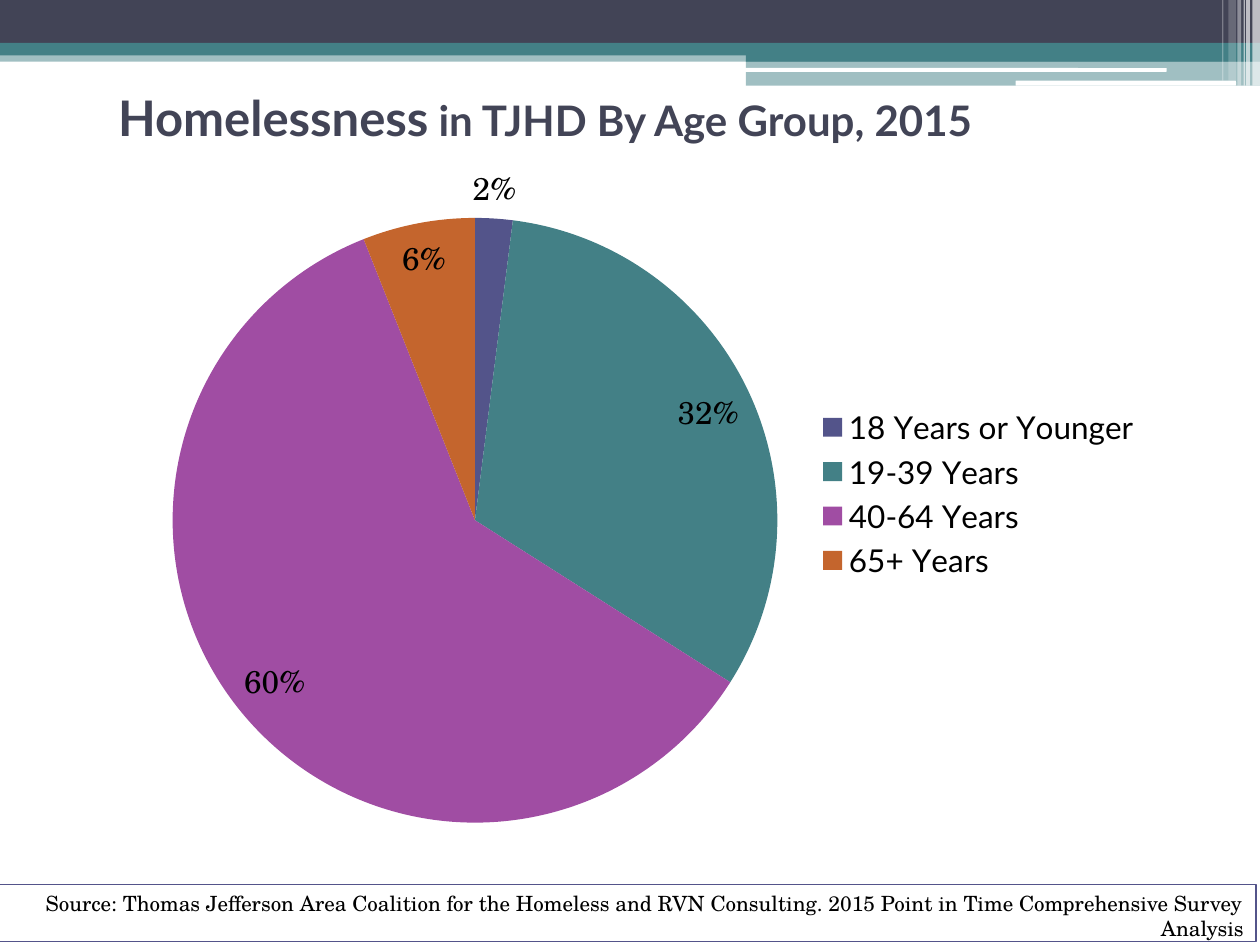
from dataclasses import dataclass

from lxml import etree
from pptx import Presentation
from pptx import util as u
from pptx.chart.data import CategoryChartData
from pptx.dml.color import RGBColor
from pptx.enum import chart as ch, shapes, text
from pptx.oxml.ns import qn


@dataclass(frozen=True)
class Theme:
    dark: str = "424456"
    teal: str = "438086"
    white: str = "FFFFFF"
    black: str = "000000"
    outline: str = "53548A"
    slices: tuple[str, ...] = ("53548A", "438086", "A04DA3", "C4652D")
    sans: str = "Lato"
    serif: str = "TeX Gyre Schola"
    title: int = 28
    subtitle: int = 24
    chart: int = 18
    source: int = 12


@dataclass(frozen=True)
class Bar:
    left: float
    top: float
    width: float
    height: float
    color: str
    opacity: int = 100
    rounded: bool = False


THEME = Theme()

# Header bands, then white rules, then white vertical stripes
BARS = [
    Bar(0, 0.4, 10, 0.09, THEME.teal, 50),
    Bar(0, 0, 10, 0.34, THEME.dark),
    Bar(0, 0.34, 10, 0.1, THEME.teal),
    Bar(5.92, 0.39, 4.08, 0.1, THEME.teal),
    Bar(5.92, 0.48, 4.08, 0.2, THEME.teal, 50),
    Bar(5.91, 0.54, 3.35, 0.03, THEME.white, rounded=True),
    Bar(8.06, 0.64, 1.75, 0.04, THEME.white, rounded=True),
    Bar(9.94, 0, 0.06, 0.68, THEME.white, 65),
    Bar(9.89, 0, 0.03, 0.68, THEME.white, 65),
    Bar(9.87, 0, 0.01, 0.68, THEME.white, 60),
    Bar(9.82, 0, 0.03, 0.68, THEME.white, 40),
    Bar(9.75, 0, 0.06, 0.64, THEME.white, 20),
    Bar(9.7, 0, 0.01, 0.64, THEME.white, 30),
]

AGE_GROUPS = {
    "18 Years or Younger": 2,
    "19-39 Years": 32,
    "40-64 Years": 60,
    "65+ Years": 6,
}
CHART_WIDTH, CHART_HEIGHT = 8.08, 5.5
PIE_LEFT, PIE_TOP, PIE_SIZE = 0.29, 0.56, 4.8  # inches within the chart


def style_font(font, name: str, size: int, color: str, bold: bool = False) -> None:
    font.name = name
    font.size = u.Pt(size)
    font.bold = bold
    font.color.rgb = RGBColor.from_string(color)


def add_bar(s, bar: Bar):
    kind = shapes.MSO_SHAPE.ROUNDED_RECTANGLE if bar.rounded else shapes.MSO_SHAPE.RECTANGLE
    sp = s.shapes.add_shape(kind, u.Inches(bar.left), u.Inches(bar.top),
                            u.Inches(bar.width), u.Inches(bar.height))
    sp.shadow.inherit = False
    sp.fill.solid()
    sp.fill.fore_color.rgb = RGBColor.from_string(bar.color)
    sp.line.fill.background()
    if bar.opacity < 100:
        color = sp.fill._xPr.find(".//" + qn("a:srgbClr"))
        etree.SubElement(color, qn("a:alpha"), val=str(bar.opacity * 1000))
    return sp


def add_title(s) -> None:
    sp = s.shapes.add_textbox(u.Inches(0.84), u.Inches(0.59), u.Inches(8.33), u.Inches(0.67))
    tf = sp.text_frame
    tf.word_wrap = True
    tf.vertical_anchor = text.MSO_ANCHOR.MIDDLE
    p = tf.paragraphs[0]
    for words, size in (("Homelessness", THEME.title),
                        (" in TJHD By Age Group, 2015", THEME.subtitle)):
        r = p.add_run()
        r.text = words
        style_font(r.font, THEME.sans, size, THEME.dark, bold=True)


def add_source(s) -> None:
    sp = add_bar(s, Bar(-0.03, 7.02, 10, 0.45, THEME.white))
    sp.line.color.rgb = RGBColor.from_string(THEME.outline)
    sp.line.width = u.Pt(0.75)
    tf = sp.text_frame
    tf.word_wrap = True
    tf.vertical_anchor = text.MSO_ANCHOR.TOP
    tf.text = ("Source: Thomas Jefferson Area Coalition for the Homeless and RVN Consulting. "
               "2015 Point in Time Comprehensive Survey Analysis")
    p = tf.paragraphs[0]
    p.alignment = text.PP_ALIGN.RIGHT
    style_font(p.runs[0].font, THEME.serif, THEME.source, THEME.black)


def place_pie(chart) -> None:
    """Fix the inner plot area, in fractions of the chart."""
    area = chart._chartSpace.find(".//" + qn("c:plotArea"))
    for old in area.findall(qn("c:layout")):
        area.remove(old)
    layout = etree.Element(qn("c:layout"))
    area.insert(0, layout)
    manual = etree.SubElement(layout, qn("c:manualLayout"))
    settings = {"layoutTarget": "inner", "xMode": "edge", "yMode": "edge",
                "x": PIE_LEFT / CHART_WIDTH, "y": PIE_TOP / CHART_HEIGHT,
                "w": PIE_SIZE / CHART_WIDTH, "h": PIE_SIZE / CHART_HEIGHT}
    for tag, val in settings.items():
        etree.SubElement(manual, qn("c:" + tag), val=str(val))


def add_age_chart(s) -> None:
    data = CategoryChartData()
    data.categories = list(AGE_GROUPS)
    data.add_series("Series 1", list(AGE_GROUPS.values()))
    chart = s.shapes.add_chart(ch.XL_CHART_TYPE.PIE, u.Inches(1.08), u.Inches(1.17),
                               u.Inches(CHART_WIDTH), u.Inches(CHART_HEIGHT), data).chart
    style_font(chart.font, THEME.serif, THEME.chart, THEME.black)
    chart.has_title = False
    place_pie(chart)

    # Legend
    chart.has_legend = True
    chart.legend.position = ch.XL_LEGEND_POSITION.RIGHT
    chart.legend.include_in_layout = False
    style_font(chart.legend.font, THEME.sans, THEME.chart, THEME.black)

    # Slices and percentages
    plot = chart.plots[0]
    plot.vary_by_categories = True
    for i, color in enumerate(THEME.slices):
        fill = plot.series[0].points[i].format.fill
        fill.solid()
        fill.fore_color.rgb = RGBColor.from_string(color)
    labels = plot.series[0].data_labels
    labels.show_percentage = True
    labels.show_value = False
    labels.number_format = "0.0%"
    labels.number_format_is_linked = True
    labels.position = ch.XL_LABEL_POSITION.BEST_FIT
    style_font(labels.font, THEME.serif, THEME.chart, THEME.black)


def main() -> None:
    prs = Presentation()
    prs.slide_width, prs.slide_height = u.Inches(10), u.Inches(7.5)
    s = prs.slides.add_slide(prs.slide_layouts[6])
    for bar in BARS:
        add_bar(s, bar)
    add_title(s)
    add_source(s)
    add_age_chart(s)
    prs.save("out.pptx")


if __name__ == "__main__":
    main()
